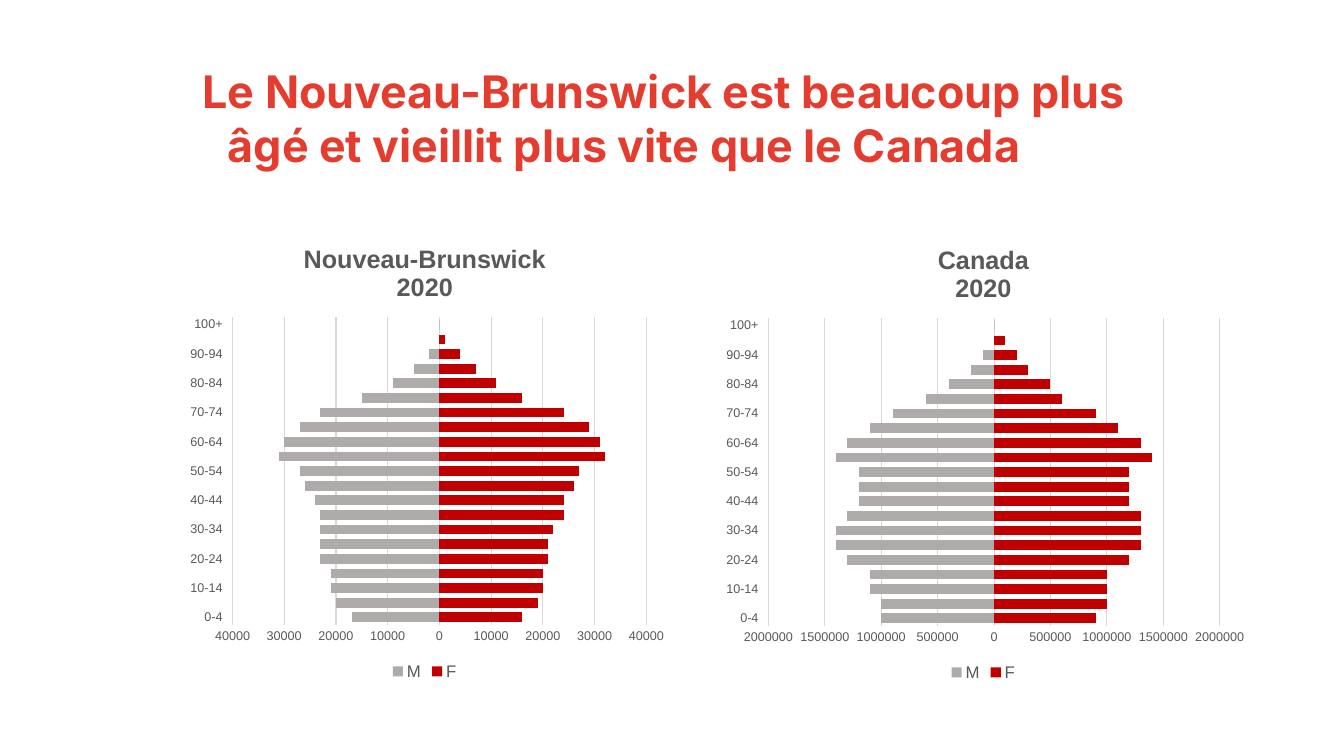
import pptx
import pptx.util
import pptx.chart.data
import pptx.dml.color
import pptx.enum.chart
import pptx.enum.text
import pptx.oxml

Pt = pptx.util.Pt
enum = pptx.enum.chart

COLORS = {"title": "E43D30", "text": "595959", "grid": "D9D9D9", "M": "AFABAB", "F": "C00000"}
AGES = [f"{age}-{age + 4}" for age in range(0, 100, 5)] + ["100+"]

BRUNSWICK = {
    "M": [-17, -20, -21, -21, -23, -23, -23, -23, -24, -26, -27,
          -31, -30, -27, -23, -15, -9, -5, -2, 0, 0],
    "F": [16, 19, 20, 20, 21, 21, 22, 24, 24, 26, 27,
          32, 31, 29, 24, 16, 11, 7, 4, 1, 0],
}
CANADA = {
    "M": [-10, -10, -11, -11, -13, -14, -14, -13, -12, -12, -12,
          -14, -13, -11, -9, -6, -4, -2, -1, 0, 0],
    "F": [9, 10, 10, 10, 12, 13, 13, 13, 12, 12, 12,
          14, 13, 11, 9, 6, 5, 3, 2, 1, 0],
}


def rgb(name):
    return pptx.dml.color.RGBColor.from_string(COLORS[name])


def style(font, size, color, bold=False, face="Arial"):
    font.name = face
    font.size = Pt(size)
    font.bold = bold
    font.color.rgb = rgb(color)


def rule(line):
    line.color.rgb = rgb("grid")
    line.width = Pt(0.75)


def add_title(slide, text):
    title = slide.shapes.title
    title.left, title.top, title.width, title.height = Pt(119.5), Pt(41.8), Pt(699), Pt(93.6)
    frame = title.text_frame
    frame.text = text
    frame.word_wrap = True
    frame.auto_size = pptx.enum.text.MSO_AUTO_SIZE.NONE
    frame.vertical_anchor = pptx.enum.text.MSO_ANCHOR.TOP
    para = frame.paragraphs[0]
    para.alignment = pptx.enum.text.PP_ALIGN.LEFT
    para.line_spacing = 1.0
    para.space_before = Pt(0)
    props = para._p.get_or_add_pPr()
    props.set("marL", str(Pt(36)))
    props.set("indent", str(Pt(-18)))
    style(para.runs[0].font, 32, "title", True, "Inter")


def place_plot(chart, left, top, width, height):
    plot = chart._chartSpace.chart.plotArea
    for old in plot.xpath("c:layout"):
        plot.remove(old)
    spots = "".join(f'<c:{tag} val="{val}"/>' for tag, val in (
        ("layoutTarget", "inner"), ("xMode", "edge"), ("yMode", "edge"),
        ("x", left), ("y", top), ("w", width), ("h", height)))
    space = "http://schemas.openxmlformats.org/drawingml/2006/chart"
    plot.insert(0, pptx.oxml.parse_xml(
        f'<c:layout xmlns:c="{space}"><c:manualLayout>{spots}</c:manualLayout></c:layout>'))


def style_axes(chart, limit, step):
    ages, people = chart.category_axis, chart.value_axis
    for axis in (ages, people):
        axis.major_tick_mark = axis.minor_tick_mark = enum.XL_TICK_MARK.NONE
        style(axis.tick_labels.font, 9, "text")
    ages.tick_label_position = enum.XL_TICK_LABEL_POSITION.LOW
    rule(ages.format.line)
    people.minimum_scale, people.maximum_scale = -limit, limit
    people.major_unit = step
    people.tick_labels.number_format = "0;0"
    people.tick_labels.number_format_is_linked = False
    people.format.line.fill.background()
    people.has_major_gridlines = True
    rule(people.major_gridlines.format.line)


def add_pyramid(slide, name, groups, unit, box, limit, step, inner):
    data = pptx.chart.data.CategoryChartData()
    data.categories = AGES
    for sex, counts in groups.items():
        data.add_series(sex, [count * unit for count in counts])
    chart = slide.shapes.add_chart(
        enum.XL_CHART_TYPE.BAR_STACKED, *map(Pt, box), data).chart
    style(chart.font, 10, "text")
    chart.has_title = True
    frame = chart.chart_title.text_frame
    frame.text = f"{name}\n2020"
    for para in frame.paragraphs:
        style(para.runs[0].font, 18, "text", True)
    chart.chart_title.include_in_layout = False
    chart.has_legend = True
    chart.legend.position = enum.XL_LEGEND_POSITION.BOTTOM
    chart.legend.include_in_layout = False
    style(chart.legend.font, 12, "text")
    plot = chart.plots[0]
    plot.gap_width, plot.overlap = 50, 100
    plot.vary_by_categories = False
    for bars in plot.series:
        bars.invert_if_negative = False
        bars.format.fill.solid()
        bars.format.fill.fore_color.rgb = rgb(bars.name)
    style_axes(chart, limit, step)
    place_plot(chart, *inner)


def main():
    deck = pptx.Presentation()
    deck.slide_width, deck.slide_height = Pt(960), Pt(540)
    slide = deck.slides.add_slide(deck.slide_layouts[5])
    add_title(slide, "Le Nouveau-Brunswick est beaucoup plus âgé et vieillit plus vite que le Canada")
    add_pyramid(slide, "Nouveau-Brunswick", BRUNSWICK, 1000, (127.4, 161.3, 352, 327.6),
                40000, 10000, (0.11, 0.2, 0.84, 0.67))
    add_pyramid(slide, "Canada", CANADA, 100000, (510.5, 162, 383.8, 327.6),
                2000000, 500000, (0.1, 0.2, 0.84, 0.67))
    deck.save("out.pptx")


if __name__ == "__main__":
    main()
